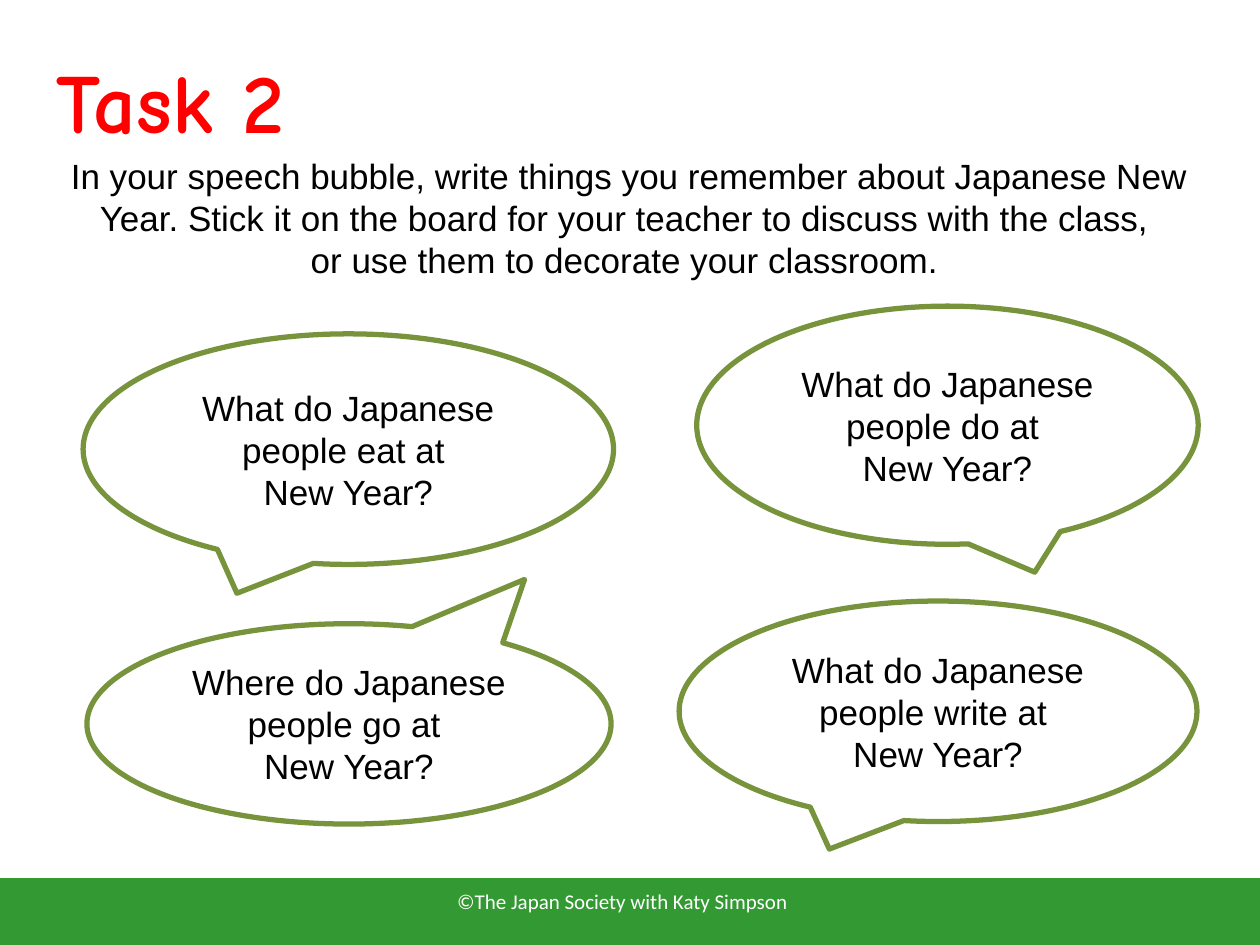
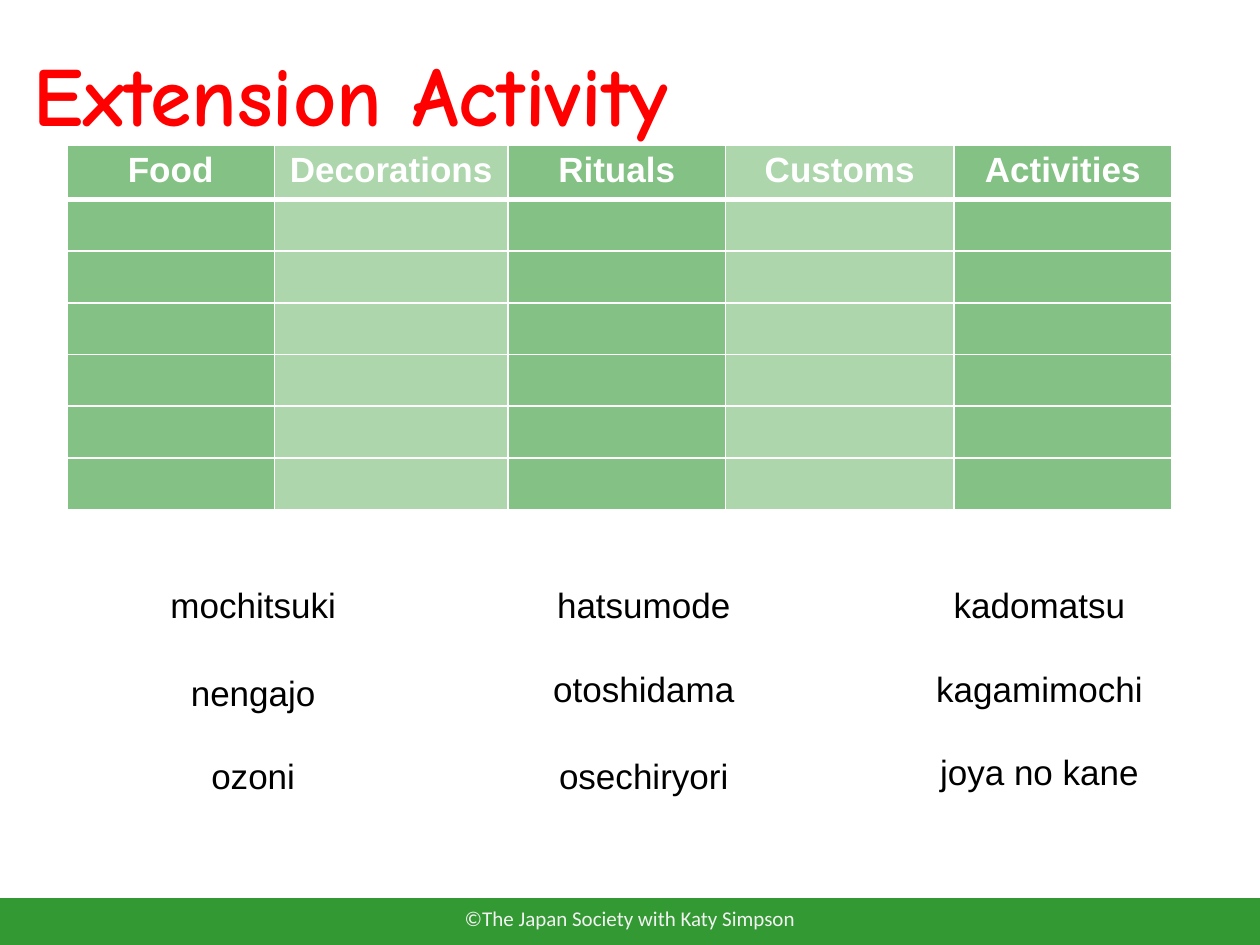
from dataclasses import dataclass

import pptx
import pptx.dml.color
import pptx.enum.shapes
import pptx.enum.text
import pptx.oxml
import pptx.oxml.ns
import pptx.slide
import pptx.table
import pptx.text.text
import pptx.util
from pptx.dml.color import RGBColor
from pptx.util import Inches

GREEN = RGBColor(0x33, 0x99, 0x33)
OLIVE = RGBColor(0x77, 0x93, 0x3C)
RED = RGBColor(0xFF, 0x00, 0x00)
BLACK = RGBColor(0x00, 0x00, 0x00)
WHITE = RGBColor(0xFF, 0xFF, 0xFF)
PALE_GREY = RGBColor(0xF2, 0xF2, 0xF2)

CENTER = pptx.enum.text.PP_ALIGN.CENTER
LEFT = pptx.enum.text.PP_ALIGN.LEFT
MIDDLE = pptx.enum.text.MSO_ANCHOR.MIDDLE
TOP = pptx.enum.text.MSO_ANCHOR.TOP
SHAPES = pptx.enum.shapes.MSO_SHAPE


@dataclass(frozen=True)
class Area:
    left: float
    top: float
    width: float
    height: float

    def lengths(self) -> list[pptx.util.Length]:
        return [Inches(value) for value in (self.left, self.top, self.width, self.height)]


@dataclass(frozen=True)
class TextStyle:
    size: float
    font: str
    color: RGBColor
    bold: bool = False
    align: pptx.enum.text.PP_ALIGN = CENTER
    anchor: pptx.enum.text.MSO_ANCHOR = MIDDLE


@dataclass(frozen=True)
class Bubble:
    verb: str
    area: Area
    question: str = "What"
    tail: tuple[float, float] = (-0.21, 0.625)


@dataclass(frozen=True)
class WordColumn:
    left: float
    words: tuple[str, ...]
    tops: tuple[float, ...]


TITLE = TextStyle(48, "Comic Neue", RED, bold=True, align=LEFT, anchor=TOP)
BODY = TextStyle(20, "Arial", BLACK)
HEADING = TextStyle(20, "Arial", WHITE, bold=True, anchor=TOP)

FOOTER = "©The Japan Society with Katy Simpson"
INSTRUCTIONS = (
    "In your speech bubble, write things you remember about Japanese New Year. "
    "Stick it on the board for your teacher to discuss with the class, ",
    "or use them to decorate your classroom. ",
)
BUBBLES = (
    Bubble("eat", Area(0.66, 2.65, 4.21, 1.83)),
    Bubble("do", Area(5.53, 2.43, 3.98, 1.89), tail=(0.174, 0.617)),
    Bubble("go", Area(0.69, 4.95, 4.16, 1.59), question="Where", tail=(0.335, -0.721)),
    Bubble("write", Area(5.39, 4.77, 4.11, 1.75)),
)

HEADINGS = ("Food", "Decorations", "Rituals", "Customs", "Activities")
COLUMN_WIDTHS = (1.65, 1.85, 1.73, 1.81, 1.73)
ROW_COUNT = 7
ROW_HEIGHT = 0.41
COLUMN_OPACITIES = (60, 40)
WORD_COLUMNS = (
    WordColumn(0.51, ("mochitsuki", "nengajo", "ozoni"), (4.6, 5.3, 5.96)),
    WordColumn(3.61, ("hatsumode", "otoshidama", "osechiryori"), (4.6, 5.27, 5.96)),
    WordColumn(6.75, ("kadomatsu", "kagamimochi", "joya no kane"), (4.6, 5.27, 5.93)),
)


def write(frame: pptx.text.text.TextFrame, lines: tuple[str, ...], style: TextStyle) -> None:
    frame.word_wrap = True
    for index, line in enumerate(lines):
        para = frame.add_paragraph() if index else frame.paragraphs[0]
        para.alignment = style.align
        span = para.add_run()
        span.text = line
        span.font.size = pptx.util.Pt(style.size)
        span.font.name = style.font
        span.font.bold = style.bold
        span.font.color.rgb = style.color


def add_text(page: pptx.slide.Slide, area: Area, lines: tuple[str, ...], style: TextStyle) -> None:
    box = page.shapes.add_textbox(*area.lengths())
    box.text_frame.vertical_anchor = style.anchor
    write(box.text_frame, lines, style)


def add_footer(page: pptx.slide.Slide, band: Area, label: Area, color: RGBColor) -> None:
    strip = page.shapes.add_shape(SHAPES.RECTANGLE, *band.lengths())
    strip.shadow.inherit = False
    strip.fill.solid()
    strip.fill.fore_color.rgb = GREEN
    strip.line.color.rgb = GREEN
    strip.line.width = pptx.util.Pt(2)
    add_text(page, label, (FOOTER,), TextStyle(12, "Calibri", color))


def add_bubble(page: pptx.slide.Slide, bubble: Bubble) -> None:
    callout = page.shapes.add_shape(SHAPES.OVAL_CALLOUT, *bubble.area.lengths())
    callout.adjustments[0], callout.adjustments[1] = bubble.tail
    callout.shadow.inherit = False
    callout.fill.background()
    callout.line.color.rgb = OLIVE
    callout.line.width = pptx.util.Pt(3)
    callout.text_frame.vertical_anchor = MIDDLE
    lines = (f"{bubble.question} do Japanese people {bubble.verb} at ", "New Year?")
    write(callout.text_frame, lines, BODY)


def style_cell(cell: pptx.table._Cell, opacity: int, bottom_width: float) -> None:
    properties = cell._tc.get_or_add_tcPr()
    for side, width in (("L", 1), ("R", 1), ("T", 1), ("B", bottom_width)):
        properties.append(pptx.oxml.parse_xml(
            f'<a:ln{side} {pptx.oxml.ns.nsdecls("a")} w="{pptx.util.Pt(width)}">'
            f'<a:solidFill><a:srgbClr val="{WHITE}"/></a:solidFill></a:ln{side}>'
        ))
    cell.fill.solid()
    cell.fill.fore_color.rgb = GREEN
    color = properties.find(".//" + pptx.oxml.ns.qn("a:srgbClr") + f"[@val='{GREEN}']")
    color.append(pptx.oxml.parse_xml(
        f'<a:alpha {pptx.oxml.ns.nsdecls("a")} val="{opacity * 1000}"/>'
    ))


def add_sorting_table(page: pptx.slide.Slide) -> None:
    area = Area(0.53, 1.15, sum(COLUMN_WIDTHS), ROW_COUNT * ROW_HEIGHT)
    grid = page.shapes.add_table(ROW_COUNT, len(HEADINGS), *area.lengths()).table
    grid.horz_banding = False
    for row in grid.rows:
        row.height = Inches(ROW_HEIGHT)
    for column_index, (heading, width) in enumerate(zip(HEADINGS, COLUMN_WIDTHS)):
        grid.columns[column_index].width = Inches(width)
        opacity = COLUMN_OPACITIES[column_index % 2]
        for row_index in range(ROW_COUNT):
            style_cell(grid.cell(row_index, column_index), opacity, 1 if row_index else 3)
        write(grid.cell(0, column_index).text_frame, (heading,), HEADING)


def build_task(page: pptx.slide.Slide) -> None:
    add_footer(page, Area(0, 6.98, 10, 0.52), Area(0, 6.95, 9.88, 0.4), WHITE)
    add_text(page, Area(0.35, 0.34, 7.2, 0.91), ("Task 2",), TITLE)
    add_text(page, Area(0.23, 1.1, 9.53, 1.25), INSTRUCTIONS, BODY)
    for bubble in BUBBLES:
        add_bubble(page, bubble)


def build_extension(page: pptx.slide.Slide) -> None:
    add_footer(page, Area(0, 7.14, 10, 0.36), Area(0, 7.09, 10, 0.4), PALE_GREY)
    add_sorting_table(page)
    for column in WORD_COLUMNS:
        for word, top in zip(column.words, column.tops):
            add_text(page, Area(column.left, top, 3, 0.39), (word,), BODY)
    add_text(page, Area(0.17, 0.29, 7.2, 0.91), ("Extension Activity",), TITLE)


def main() -> None:
    deck = pptx.Presentation()
    deck.slide_width = Inches(10)
    deck.slide_height = Inches(7.5)
    for build in (build_task, build_extension):
        build(deck.slides.add_slide(deck.slide_layouts[6]))
    deck.save("out.pptx")


if __name__ == "__main__":
    main()
